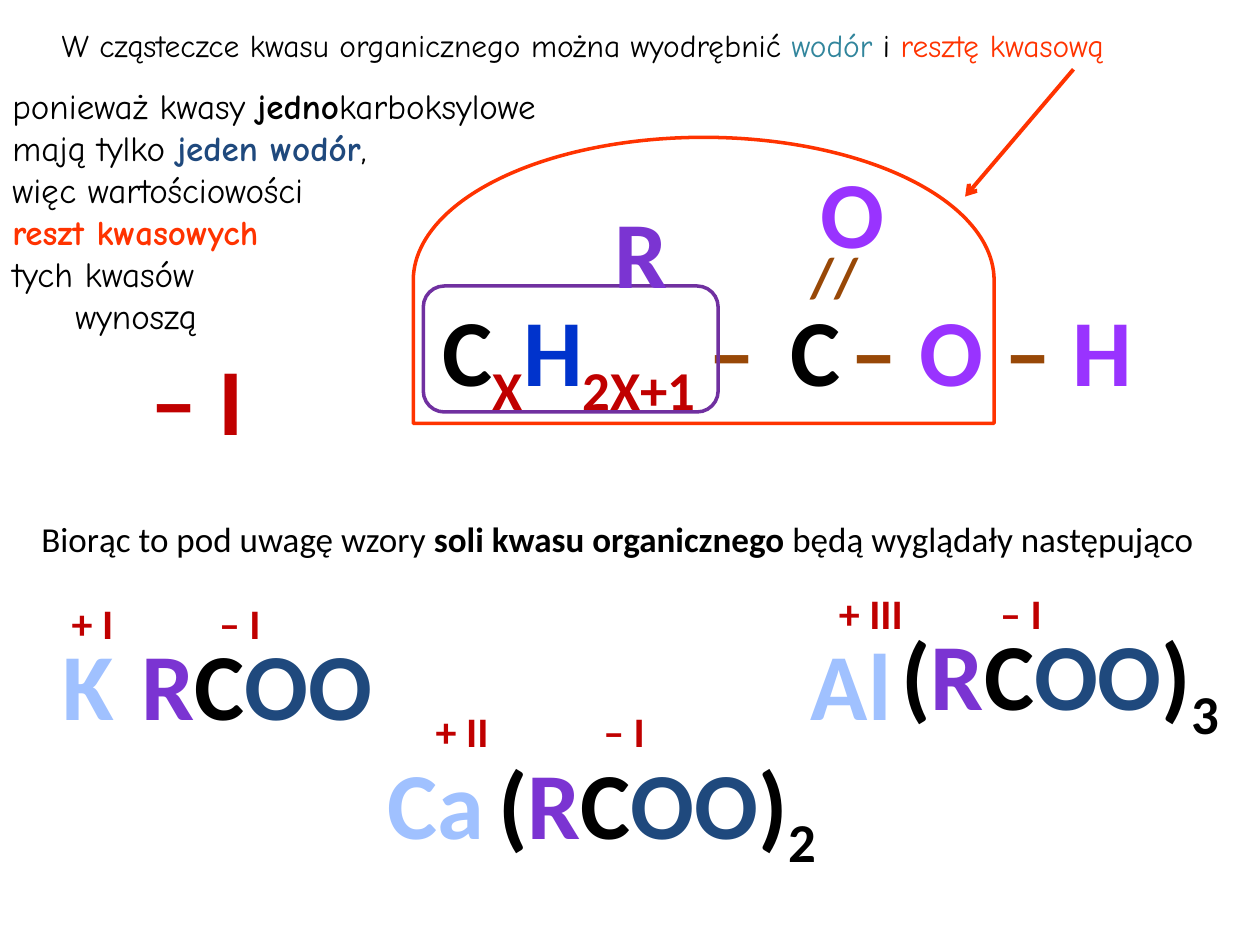
import pptx
import pptx.dml.color
import pptx.enum.shapes
import pptx.enum.text
import pptx.oxml.ns
import pptx.util
from lxml import etree
from pptx.util import Inches

COLORS = {
    "black": "000000", "teal": "31859C", "orange": "FF3300", "navy": "1F497D",
    "red": "C00000", "blue": "0033CC", "brown": "984807", "violet": "9933FF",
    "purple": "7B34D2", "frame": "7030A0", "metal": "A0C1FF",
}
SHAPES = pptx.enum.shapes.MSO_SHAPE
qn = pptx.oxml.ns.qn

deck = pptx.Presentation()
deck.slide_width = Inches(10)
deck.slide_height = Inches(7.5)
page = deck.slides.add_slide(deck.slide_layouts[6])


def add_span(para, text, color="black", size=54, font="Calibri", bold=True, baseline=0):
    span = para.add_run()
    span.text = text
    span.font.size = pptx.util.Pt(size)
    span.font.name = font
    span.font.bold = bold
    span.font.color.rgb = pptx.dml.color.RGBColor.from_string(COLORS[color])
    if baseline:
        span._r.get_or_add_rPr().set("baseline", str(baseline * 1000))


def add_box(left, top, width, height, centered=True, wrap=False):
    box = page.shapes.add_textbox(Inches(left), Inches(top), Inches(width), Inches(height))
    box.text_frame.word_wrap = wrap
    box.text_frame.auto_size = pptx.enum.text.MSO_AUTO_SIZE.SHAPE_TO_FIT_TEXT
    if centered:
        box.text_frame.paragraphs[0].alignment = pptx.enum.text.PP_ALIGN.CENTER
    return box.text_frame


para = add_box(0.39, 0.16, 9.27, 0.4, centered=False).paragraphs[0]
for text, color in [
    ("W cząsteczce kwasu organicznego można wyodrębnić ", "black"),
    ("wodór ", "teal"), ("i ", "black"), ("resztę kwasową", "orange"),
]:
    add_span(para, text, color, size=18, font="Comic Neue", bold=False)

acid_parts = [
    ((3.28, 2.27, 3.12, 1.01), 54, [
        ("C", "black", 0), ("X", "red", -25), ("H", "blue", 0),
        ("2X+1 ", "red", -25), ("– ", "brown", 0)]),
    ((6.41, 1.17, 0.71, 1.01), 54, [("O", "violet", 0)]),
    ((6.33, 1.87, 0.59, 0.64), 32, [("//", "brown", 0)]),
    ((6.17, 2.27, 0.6, 1.01), 54, [("C", "black", 0)]),
    ((6.64, 2.27, 2.46, 1.01), 54, [
        ("– ", "brown", 0), ("O ", "violet", 0), ("– ", "brown", 0), ("H", "violet", 0)]),
    ((1.09, 2.66, 1.12, 1.01), 54, [("– I ", "red", 0)]),
]
for place, size, spans in acid_parts:
    para = add_box(*place).paragraphs[0]
    for text, color, baseline in spans:
        add_span(para, text, color, size=size, baseline=baseline)

for kind, place, rotation, color in [
    (SHAPES.FLOWCHART_DELAY, (4.45, -0.08, 2.27, 4.61), 270, "orange"),
    (SHAPES.ROUNDED_RECTANGLE, (3.36, 2.27, 2.34, 1), 0, "frame"),
]:
    outline = page.shapes.add_shape(kind, *[Inches(value) for value in place])
    outline.rotation = rotation
    outline.shadow.inherit = False
    outline.fill.background()
    outline.line.color.rgb = pptx.dml.color.RGBColor.from_string(COLORS[color])
    outline.line.width = pptx.util.Pt(2)

add_span(add_box(4.77, 1.49, 0.63, 1.01).paragraphs[0], "R", "purple")

arrow = page.shapes.add_connector(
    pptx.enum.shapes.MSO_CONNECTOR.STRAIGHT,
    Inches(8.52), Inches(0.55), Inches(7.66), Inches(1.56))
arrow.line.color.rgb = pptx.dml.color.RGBColor.from_string(COLORS["orange"])
arrow.line.width = pptx.util.Pt(2.25)
etree.SubElement(arrow.line._get_or_add_ln(), qn("a:tailEnd"), type="arrow")
etree.SubElement(arrow._element.spPr, qn("a:effectLst"))

reason_lines = [
    [("ponieważ kwasy ", "black", False), ("jedno", "black", True),
     ("karboksylowe", "black", False)],
    [("mają tylko ", "black", False), ("jeden wodór", "navy", True), (",", "black", False)],
    [("więc wartościowości", "black", False)],
    [("reszt kwasowych", "orange", True)],
    [("tych kwasów", "black", False)],
    [("\twynoszą", "black", False)],
]
frame = add_box(0, 0.62, 4.86, 2.12, centered=False)
for index, spans in enumerate(reason_lines):
    para = frame.add_paragraph() if index else frame.paragraphs[0]
    for text, color, bold in spans:
        add_span(para, text, color, size=20, font="Comic Neue", bold=bold)

para = add_box(0.23, 4.06, 9.42, 0.44, centered=False).paragraphs[0]
for text, bold in [
    ("Biorąc to pod uwagę wzory ", False), ("soli kwasu organicznego ", True),
    ("będą wyglądały następująco", False),
]:
    add_span(para, text, size=20, bold=bold)

salts = [
    ("K", (0.39, 4.92, 0.62), (1.02, 4.92, 2.04), "", "+ I", (0.47, 4.69), 1.17),
    ("Ca", (2.97, 5.86, 0.98), (3.83, 5.86, 2.77), "2", "+ II", (3.36, 5.55), 1.33),
    ("Al", (6.33, 4.92, 0.85), (7.03, 4.84, 2.77), "3", "+ III", (6.56, 4.61), 1.28),
]
for metal, metal_place, residue_place, count, charge, charge_place, tab in salts:
    add_span(add_box(*metal_place, 1.01).paragraphs[0], metal, "metal")

    para = add_box(*residue_place, 1.01).paragraphs[0]
    if count:
        add_span(para, "(")
    for text, color in [("R", "purple"), ("C", "black"), ("OO", "navy")]:
        add_span(para, text, color)
    if count:
        add_span(para, ")")
        add_span(para, count, baseline=-25)

    para = add_box(*charge_place, 2.58, 0.5, centered=False, wrap=True).paragraphs[0]
    stops = etree.SubElement(para._p.get_or_add_pPr(), qn("a:tabLst"))
    etree.SubElement(stops, qn("a:tab"), pos=str(Inches(tab)), algn="l")
    add_span(para, charge + "\t– I", "red", size=24)

deck.save("out.pptx")
